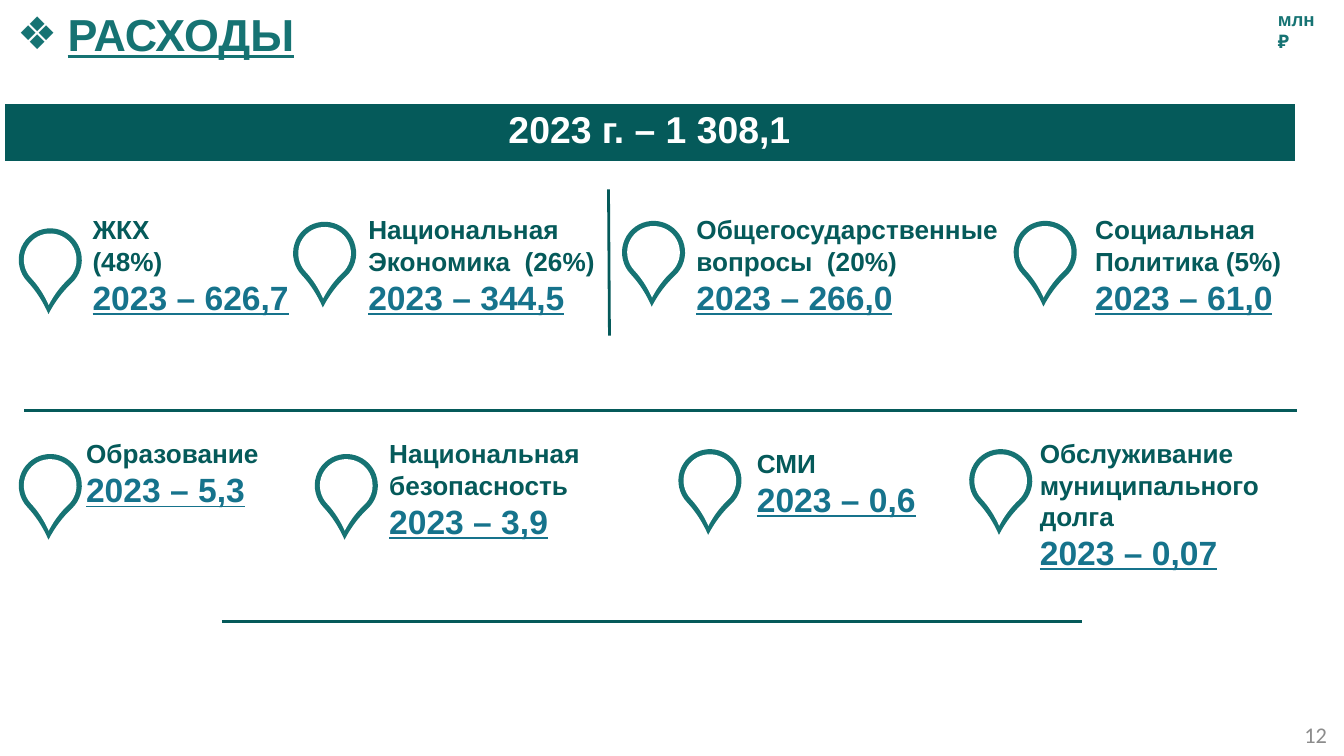
"""Build the slide of 2023 budget expenses by section."""
from lxml.etree import SubElement
from pptx import Presentation
from pptx.dml.color import RGBColor
from pptx.enum.shapes import MSO_CONNECTOR, MSO_SHAPE
from pptx.enum.text import MSO_ANCHOR, MSO_AUTO_SIZE, PP_ALIGN
from pptx.oxml.ns import qn
from pptx.util import Pt

COLORS = {
    "teal": "167373",
    "dark": "055A5A",
    "blue": "16738C",
    "white": "FFFFFF",
    "gray": "8C8C8C",
}


def add_run(paragraph, text, size, color, bold=True, underline=False, font="Arial"):
    """Add one formatted run to the paragraph."""
    run = paragraph.add_run()
    run.text = text
    run.font.name = font
    run.font.size = Pt(size)
    run.font.bold = bold
    run.font.underline = underline
    run.font.color.rgb = RGBColor.from_string(COLORS[color])


def add_frame(left, top, width, height, wrap=False):
    """Add a text box and return its text frame."""
    frame = slide.shapes.add_textbox(Pt(left), Pt(top), Pt(width), Pt(height)).text_frame
    frame.word_wrap = wrap
    frame.auto_size = MSO_AUTO_SIZE.SHAPE_TO_FIT_TEXT
    return frame


prs = Presentation()
prs.slide_width, prs.slide_height = Pt(720), Pt(405)
slide = prs.slides.add_slide(prs.slide_layouts[5])

heading = slide.shapes.title
heading.left, heading.top, heading.width, heading.height = Pt(2), Pt(0), Pt(171), Pt(36)
heading.text_frame.word_wrap = True
heading.text_frame.auto_size = MSO_AUTO_SIZE.NONE
heading.text_frame.vertical_anchor = MSO_ANCHOR.TOP
heading_line = heading.text_frame.paragraphs[0]
heading_line.alignment = PP_ALIGN.LEFT
bullet = heading_line._p.get_or_add_pPr()
bullet.set("marL", str(Pt(27)))
bullet.set("indent", str(-Pt(27)))
SubElement(bullet, qn("a:buFont")).set("typeface", "Arial")
SubElement(bullet, qn("a:buChar")).set("char", "❖")
add_run(heading_line, "РАСХОДЫ", 24, "teal", underline=True)

unit = add_frame(677.5, 0.7, 42.5, 19.4)
add_run(unit.paragraphs[0], "млн ₽", 10, "teal")

total = slide.shapes.add_table(1, 1, Pt(2), Pt(55.4), Pt(692), Pt(31)).table.cell(0, 0)
total.fill.solid()
total.fill.fore_color.rgb = RGBColor.from_string(COLORS["dark"])
total_line = total.text_frame.paragraphs[0]
total_line.alignment = PP_ALIGN.CENTER
add_run(total_line, "2023 г. – 1 308,1", 20, "white")

sections = [
    ((10, 122.3), (42.5, 111, 120, 63), ["ЖКХ", "(48%)"], "626,7"),
    ((157, 118.8), (190.2, 111, 137, 63), ["Национальная", "Экономика  (26%)"], "344,5"),
    ((333.2, 118.3), (366, 111, 181, 63), ["Общегосударственные", "вопросы  (20%)"], "266,0"),
    ((543, 118.3), (579.6, 111, 115, 63), ["Социальная", "Политика (5%)"], "61,0"),
    ((10, 243.2), (39, 231, 107, 46), ["Образование"], "5,3"),
    ((168.6, 243.2), (201.4, 231, 121, 63), ["Национальная", "безопасность"], "3,9"),
    ((363.4, 240.6), (398.4, 236.2, 100, 46), ["СМИ"], "0,6"),
    ((519.2, 240.6), (550, 231, 169, 80), ["Обслуживание", "муниципального долга"], "0,07"),
]
for (pin_left, pin_top), box, names, amount in sections:
    for inset, color in ((0, "teal"), (2.8, "white")):
        side = 33.8 - 2 * inset
        pin = slide.shapes.add_shape(
            MSO_SHAPE.TEAR, Pt(pin_left + inset), Pt(pin_top + inset), Pt(side), Pt(side)
        )
        pin.adjustments[0] = 1.215
        pin.rotation = 136.9
        pin.shadow.inherit = False
        pin.fill.solid()
        pin.fill.fore_color.rgb = RGBColor.from_string(COLORS[color])
        pin.line.fill.background()
    label = add_frame(*box, wrap=amount == "0,07")
    for index, name in enumerate(names):
        name_line = label.add_paragraph() if index else label.paragraphs[0]
        add_run(name_line, name, 14, "dark")
    add_run(label.add_paragraph(), f"2023 – {amount}", 18, "blue", underline=True)

dividers = [
    (13, 219.8, 694.6, 219.8),
    (118.8, 332.8, 579.6, 332.8),
    (326, 101.4, 326.5, 179.8),
]
for ends in dividers:
    divider = slide.shapes.add_connector(MSO_CONNECTOR.STRAIGHT, *map(Pt, ends))
    divider.line.color.rgb = RGBColor.from_string(COLORS["dark"])
    divider.line.width = Pt(1.5)
    SubElement(divider._element.spPr, qn("a:effectLst"))

page = add_frame(550, 383, 168, 21.6, wrap=True)
page.auto_size = MSO_AUTO_SIZE.NONE
page.vertical_anchor = MSO_ANCHOR.MIDDLE
page.paragraphs[0].alignment = PP_ALIGN.RIGHT
add_run(page.paragraphs[0], "12", 12, "gray", bold=False, font="Calibri")

prs.save("out.pptx")
